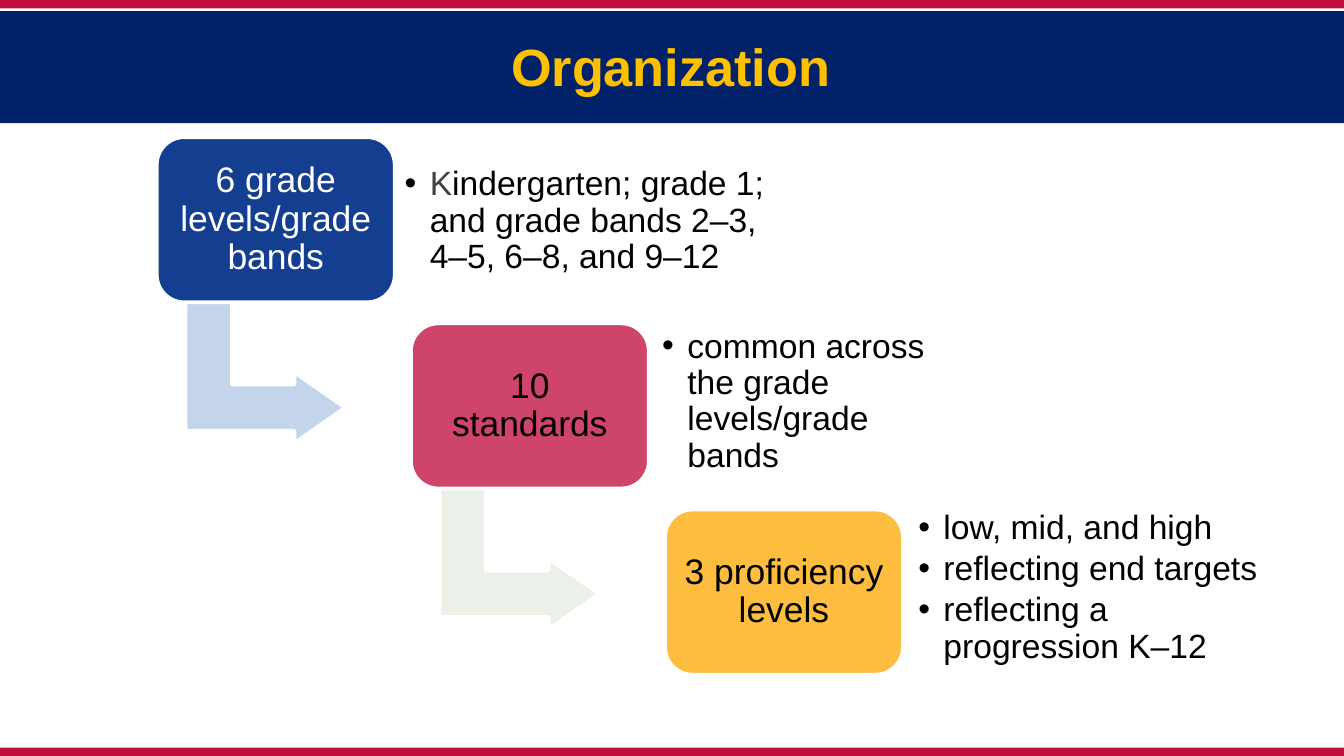
from lxml import etree
from pptx import Presentation, util as u
from pptx.dml.color import RGBColor
from pptx.enum import shapes, text
from pptx.oxml.ns import qn

PX = 9525  # EMU per px, 96 px to the inch
WIDE, HIGH = 960, 540
FONT = "Arial"
WHITE, BLACK, GREY = "FFFFFF", "000000", "404040"

# Content
TITLE = "Organization"
BARS = [  # top, height, colour
    (0, 6, "BF0D3E"),
    (534, 6, "BF0D3E"),
    (8, 80, "012169"),
]
STEPS = [
    dict(label="6 grade levels/grade bands", fill="143F90", ink=WHITE,
         arrow="C4D5EB", notes=["Kindergarten; grade 1; and grade bands 2–3, "
                                "4–5, 6–8, and 9–12"],
         area=(282, 102, 295, 112)),
    dict(label="10 standards", fill="CE446A", ink=BLACK,
         arrow="EBF1E9", notes=["common across the grade levels/grade bands"],
         area=(466, 239, 207, 96)),
    dict(label="3 proficiency levels", fill="FDBD3F", ink=BLACK,
         arrow=None, notes=["low, mid, and high", "reflecting end targets",
                            "reflecting a progression K–12"],
         area=(649, 365, 279, 110)),
]

# Staircase layout: first and last box fix the steps between them
FIRST, LAST = (112, 98), (475, 364)
STEP_X, STEP_Y = [(b - a) / (len(STEPS) - 1) for a, b in zip(FIRST, LAST)]
BOX_W, BOX_H = 170, 118
ARROW_X, ARROW_Y, ARROW_W, ARROW_H = 27, 111, 101, 114


def color(code):
    return RGBColor.from_string(code)


def emu(*sizes):
    return [u.Emu(round(s * PX)) for s in sizes]


def style(run, size, ink, bold=False):
    font = run.font
    font.name, font.size, font.bold = FONT, u.Pt(size), bold
    font.color.rgb = color(ink)


def add_form(kind, area, fill, edge=False, adjust=()):
    form = slide.shapes.add_shape(kind, *emu(*area))
    form.shadow.inherit = False
    form.fill.solid()
    form.fill.fore_color.rgb = color(fill)
    if edge:
        form.line.color.rgb = color(WHITE)
        form.line.width = u.Pt(2)
    else:
        form.line.fill.background()
    for i, value in enumerate(adjust):
        form.adjustments[i] = value
    return form


def set_frame(frame, inset):
    frame.word_wrap = True
    frame.vertical_anchor = text.MSO_ANCHOR.MIDDLE
    (frame.margin_left, frame.margin_top,
     frame.margin_right, frame.margin_bottom) = emu(*[inset] * 4)


def add_bullet(para):
    props = para._p.get_or_add_pPr()
    indent = emu(18)[0]
    props.set("marL", str(indent))
    props.set("indent", str(-indent))
    tint = etree.SubElement(props, qn("a:buClr"))
    etree.SubElement(tint, qn("a:srgbClr"), val=BLACK)
    etree.SubElement(props, qn("a:buFont"), typeface=FONT)
    etree.SubElement(props, qn("a:buChar"), char="•")


def add_notes(notes, area):
    frame = slide.shapes.add_textbox(*emu(*area)).text_frame
    set_frame(frame, 7)
    frame.text = "\n".join(notes)
    for para in frame.paragraphs:
        para.level = 1
        para.line_spacing = 0.9
        para.space_after = u.Pt(2.7)
        add_bullet(para)
        style(para.runs[0], 18, BLACK)
    return frame


deck = Presentation()
deck.slide_width, deck.slide_height = emu(WIDE, HIGH)
slide = deck.slides.add_slide(deck.slide_layouts[6])

# Bars and title
for top, height, fill in BARS:
    add_form(shapes.MSO_SHAPE.RECTANGLE, (0, top, WIDE, height), fill)
head = slide.shapes.add_textbox(*emu(354, 20, 250, 55)).text_frame
head.word_wrap = True
head.text = TITLE
head.paragraphs[0].alignment = text.PP_ALIGN.CENTER
style(head.paragraphs[0].runs[0], 28, "FFC000", bold=True)

# Steps: arrow, box and notes
for i, step in enumerate(STEPS):
    x, y = FIRST[0] + i * STEP_X, FIRST[1] + i * STEP_Y
    if step["arrow"]:
        arrow = add_form(shapes.MSO_SHAPE.BENT_UP_ARROW,
                         (x + ARROW_X, y + ARROW_Y, ARROW_W, ARROW_H),
                         step["arrow"], True, (0.328, 0.25, 0.358))
        arrow.rotation = 90
    box = add_form(shapes.MSO_SHAPE.ROUNDED_RECTANGLE, (x, y, BOX_W, BOX_H),
                   step["fill"], True, (0.167,))
    # The rounded corners already inset the text by about 6 px
    set_frame(box.text_frame, 8)
    box.text_frame.text = step["label"]
    para = box.text_frame.paragraphs[0]
    para.alignment = text.PP_ALIGN.CENTER
    para.line_spacing = 0.9
    style(para.runs[0], 19, step["ink"])
    frame = add_notes(step["notes"], step["area"])
    if i == 0:  # grey first letter
        para = frame.paragraphs[0]
        first, rest = para.runs[0], para.add_run()
        first.text, rest.text = first.text[:1], first.text[1:]
        style(first, 18, GREY)
        style(rest, 18, BLACK)

deck.save("out.pptx")
